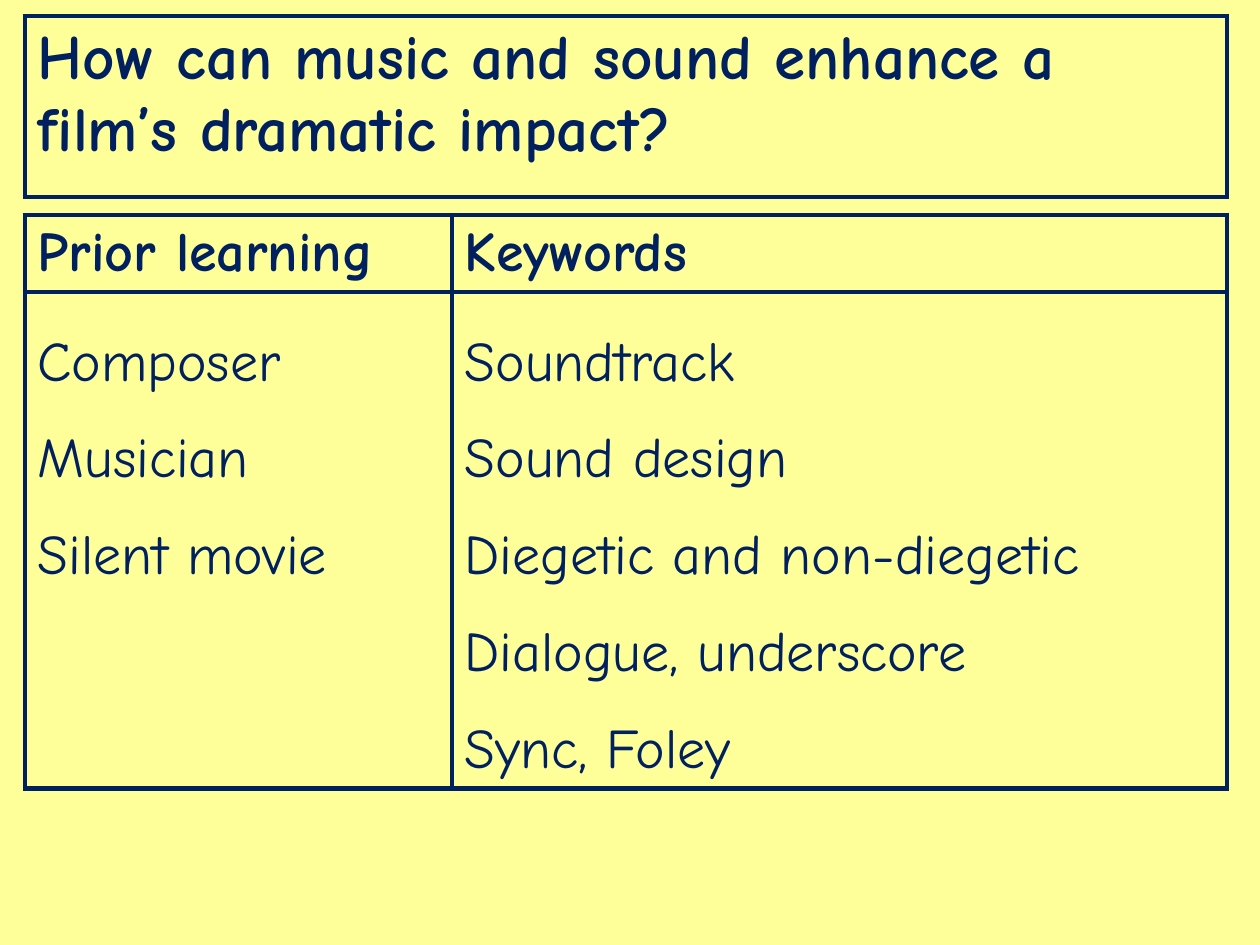
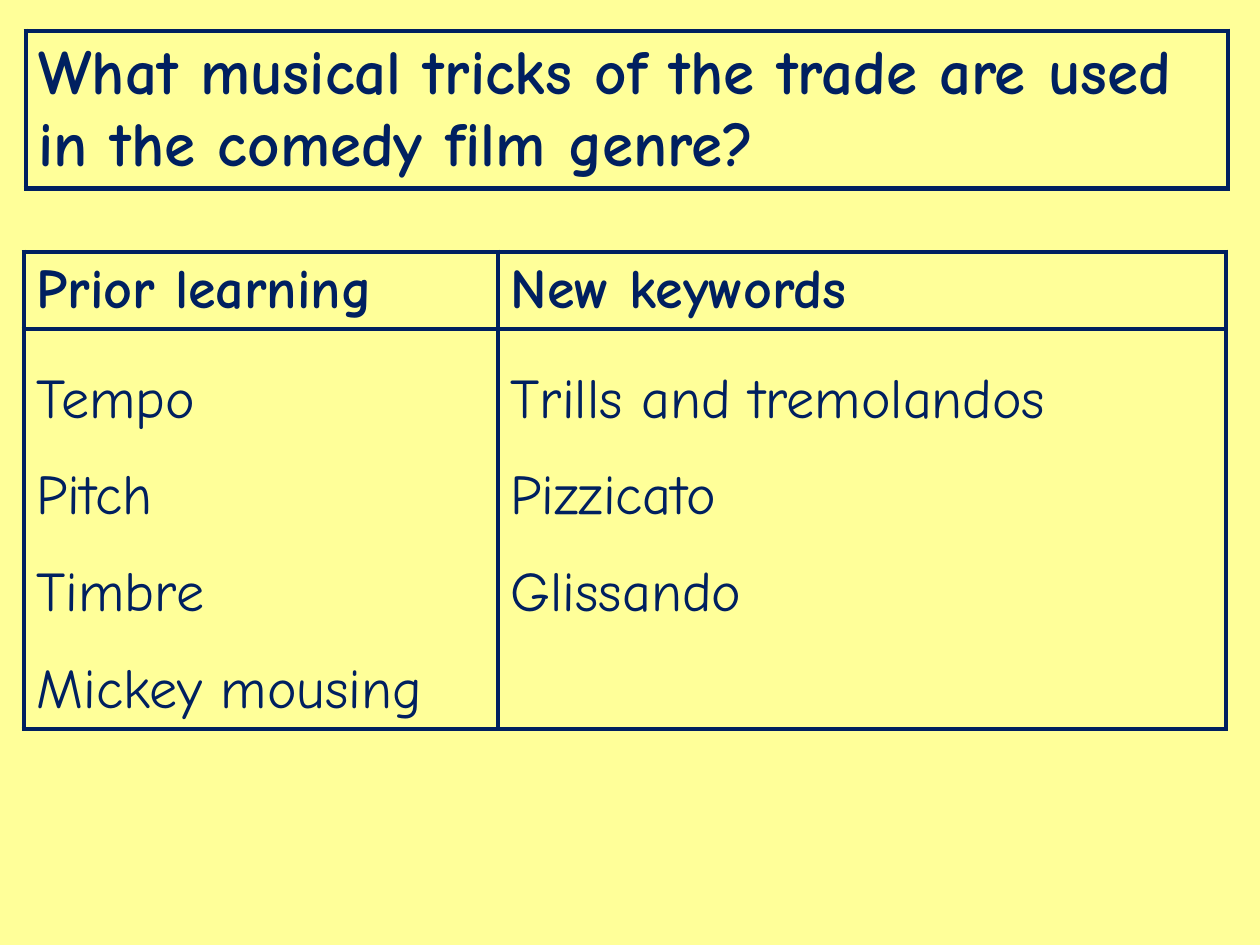
from lxml.etree import SubElement
from pptx import Presentation
from pptx.dml.color import RGBColor as RGB
from pptx.oxml.ns import qn
from pptx.util import Pt

PX = 914400 / 126
SIZE = (1260, 945)
WIDE = 1202
HEAD = 77
FONT = "Comic Neue"
COLORS = {"page": "FFFF99", "ink": "002060"}
BLANK = 6

SLIDES = [
    {
        "title": "How can music and sound enhance a film’s dramatic impact?",
        "title_box": (25, 16, 181),
        "words": {
            "Prior learning": ["Composer", "Musician", "Silent movie"],
            "Keywords": ["Soundtrack", "Sound design", "Diegetic and non-diegetic",
                         "Dialogue, underscore", "Sync, Foley"],
        },
        "words_box": (25, 215, 573),
        "split": 427,
    },
    {
        "title": "What musical tricks of the trade are used in the comedy film genre?",
        "title_box": (26, 31, 157),
        "words": {
            "Prior learning": ["Tempo", "Pitch", "Timbre", "Mickey mousing"],
            "New keywords": ["Trills and tremolandos", "Pizzicato", "Glissando"],
        },
        "words_box": (24, 252, 477),
        "split": 474,
    },
]


def px(n):
    return round(n * PX)


def frame(cell):
    """Clear the cell's fill and rule all four of its sides."""
    cell.fill.background()
    props = cell._tc.get_or_add_tcPr()
    for i, side in enumerate("LRTB"):
        line = SubElement(props, qn(f"a:ln{side}"), w=str(Pt(3)))
        fill = SubElement(line, qn("a:solidFill"))
        SubElement(fill, qn("a:srgbClr"), val=COLORS["ink"])
        props.insert(i, line)


def write(cell, lines, size, bold, space=None):
    text = cell.text_frame
    for i, line in enumerate(lines):
        para = text.add_paragraph() if i else text.paragraphs[0]
        para.line_spacing = space
        run = para.add_run()
        run.text = line
        font = run.font
        font.name, font.size, font.bold = FONT, Pt(size), bold
        font.color.rgb = RGB.from_string(COLORS["ink"])


def add_grid(slide, left, top, cols, rows):
    grid = slide.shapes.add_table(
        len(rows), len(cols), px(left), px(top), px(sum(cols)), px(sum(rows))
    ).table
    grid.first_row = grid.horz_banding = False
    for col, wide in zip(grid.columns, cols):
        col.width = px(wide)
    for row, high in zip(grid.rows, rows):
        row.height = px(high)
    for cell in grid.iter_cells():
        frame(cell)
    return grid


def add_title(slide, text, box):
    left, top, high = box
    grid = add_grid(slide, left, top, [WIDE], [high])
    write(grid.cell(0, 0), [text], 36, True)


def add_words(slide, words, box, split):
    left, top, high = box
    grid = add_grid(slide, left, top, [split, WIDE - split], [HEAD, high - HEAD])
    for col, (head, items) in enumerate(words.items()):
        write(grid.cell(0, col), [head], 32, True)
        write(grid.cell(1, col), items, 32, False, 1.5)


def main():
    deck = Presentation()
    deck.slide_width, deck.slide_height = map(px, SIZE)
    page = deck.slide_master.background.fill
    page.solid()
    page.fore_color.rgb = RGB.from_string(COLORS["page"])
    for data in SLIDES:
        slide = deck.slides.add_slide(deck.slide_layouts[BLANK])
        add_title(slide, data["title"], data["title_box"])
        add_words(slide, data["words"], data["words_box"], data["split"])
    deck.save("out.pptx")


if __name__ == "__main__":
    main()
